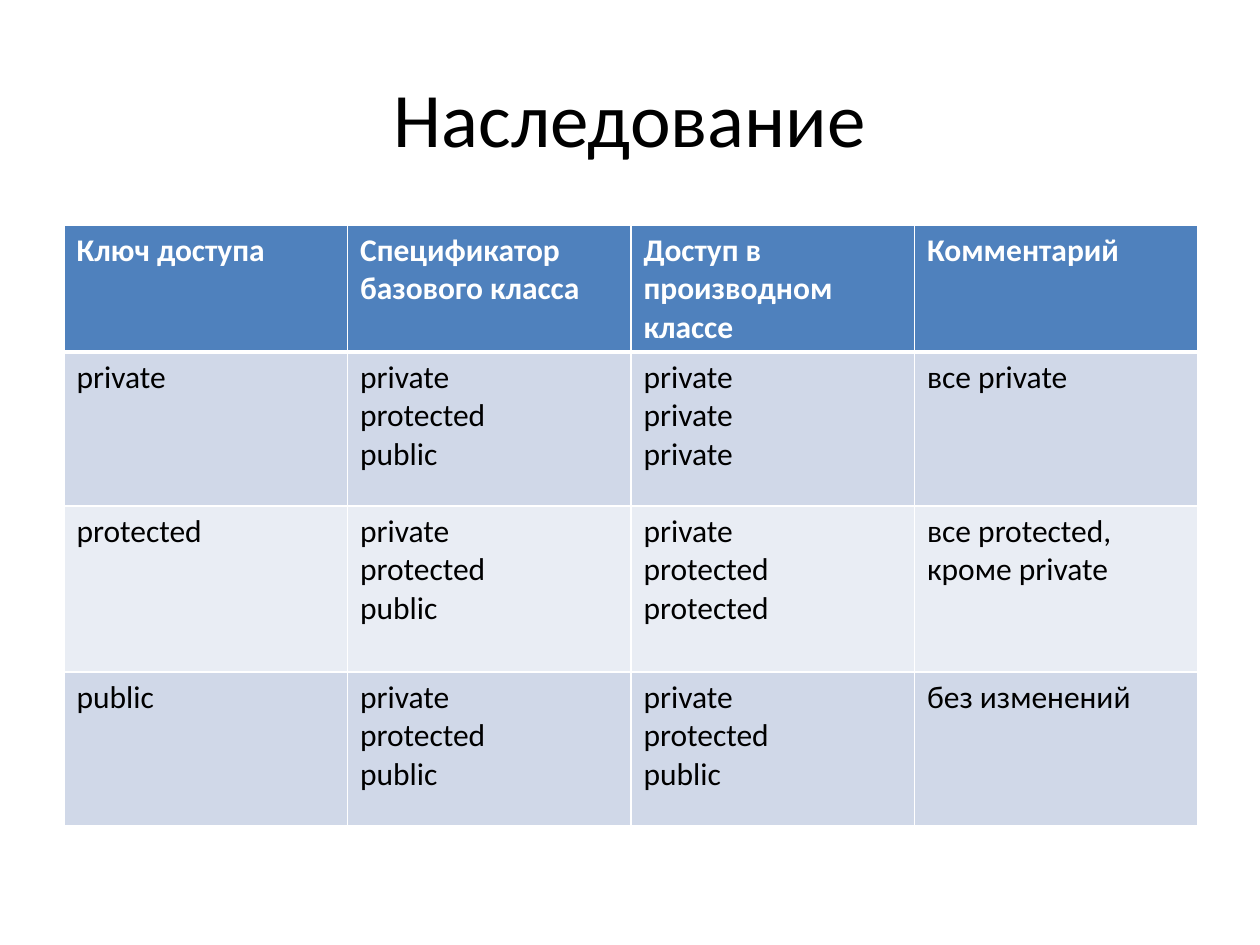
from lxml.etree import SubElement
from pptx import Presentation
from pptx.dml.color import RGBColor
from pptx.enum.text import MSO_ANCHOR, PP_ALIGN
from pptx.oxml.ns import qn
from pptx.util import Emu, Pt

PX_PER_INCH = 126
SLIDE_SIZE = (1260, 945)
ROW_HEIGHTS = [127, 154, 166, 154]
SPECIFIERS = ["private", "protected", "public"]
ROWS = [
    [["Ключ доступа"], ["Спецификатор базового класса"],
     ["Доступ в производном классе"], ["Комментарий"]],
    [["private"], SPECIFIERS, ["private"] * 3, ["все private"]],
    [["protected"], SPECIFIERS, ["private", "protected", "protected"],
     ["все protected, кроме private"]],
    [["public"], SPECIFIERS, SPECIFIERS, ["без изменений"]],
]


def px(length):
    return Emu(round(length * 914400 / PX_PER_INCH))


def color(value):
    return RGBColor.from_string(value)


def write_text(frame, lines, *, font, size, fill, bold=False, align=PP_ALIGN.LEFT):
    for index, line in enumerate(lines):
        paragraph = frame.paragraphs[0] if index == 0 else frame.add_paragraph()
        paragraph.alignment = align
        run = paragraph.add_run()
        run.text = line
        run.font.name = font
        run.font.size = Pt(size)
        run.font.bold = bold
        run.font.color.rgb = color(fill)


def set_borders(cell, value, top=1, bottom=1):
    """Draw all four sides; must run before the cell is filled."""
    properties = cell._tc.get_or_add_tcPr()
    for side, width in {"L": 1, "R": 1, "T": top, "B": bottom}.items():
        line = SubElement(properties, qn(f"a:ln{side}"), w=str(Pt(width)))
        fill = SubElement(line, qn("a:solidFill"))
        SubElement(fill, qn("a:srgbClr"), val=value)


class SlideBuilder:
    """Holds the deck's style and the slide being built."""

    font = "Calibri"
    ink = "000000"
    paper = "FFFFFF"
    header_fill = "4F81BD"
    band_fills = ["E9EDF4", "D0D8E8"]

    def __init__(self, slide):
        self.slide = slide

    def title(self, text, left, top, width, height):
        box = self.slide.shapes.add_textbox(px(left), px(top), px(width), px(height))
        frame = box.text_frame
        frame.word_wrap = True
        frame.vertical_anchor = MSO_ANCHOR.MIDDLE
        write_text(frame, [text], font=self.font, size=44, fill=self.ink,
                   align=PP_ALIGN.CENTER)

    def table(self, rows, row_heights, left, top, width):
        table = self.slide.shapes.add_table(
            len(rows), len(rows[0]), px(left), px(top), px(width),
            px(sum(row_heights))).table
        for row_index, (row, height) in enumerate(zip(rows, row_heights)):
            table.rows[row_index].height = px(height)
            header = row_index == 0
            for column_index, lines in enumerate(row):
                cell = table.cell(row_index, column_index)
                set_borders(cell, self.paper, top=3 if row_index == 1 else 1,
                            bottom=3 if header else 1)
                cell.fill.solid()
                cell.fill.fore_color.rgb = color(
                    self.header_fill if header else self.band_fills[row_index % 2])
                write_text(cell.text_frame, lines, font=self.font, size=18,
                           fill=self.paper if header else self.ink, bold=header)


def main():
    presentation = Presentation()
    presentation.slide_width, presentation.slide_height = map(px, SLIDE_SIZE)
    slide = presentation.slides.add_slide(presentation.slide_layouts[6])
    builder = SlideBuilder(slide)
    builder.title("Наследование", 63, 38, 1134, 158)
    builder.table(ROWS, ROW_HEIGHTS, 64, 225, 1134)
    presentation.save("out.pptx")


if __name__ == "__main__":
    main()
